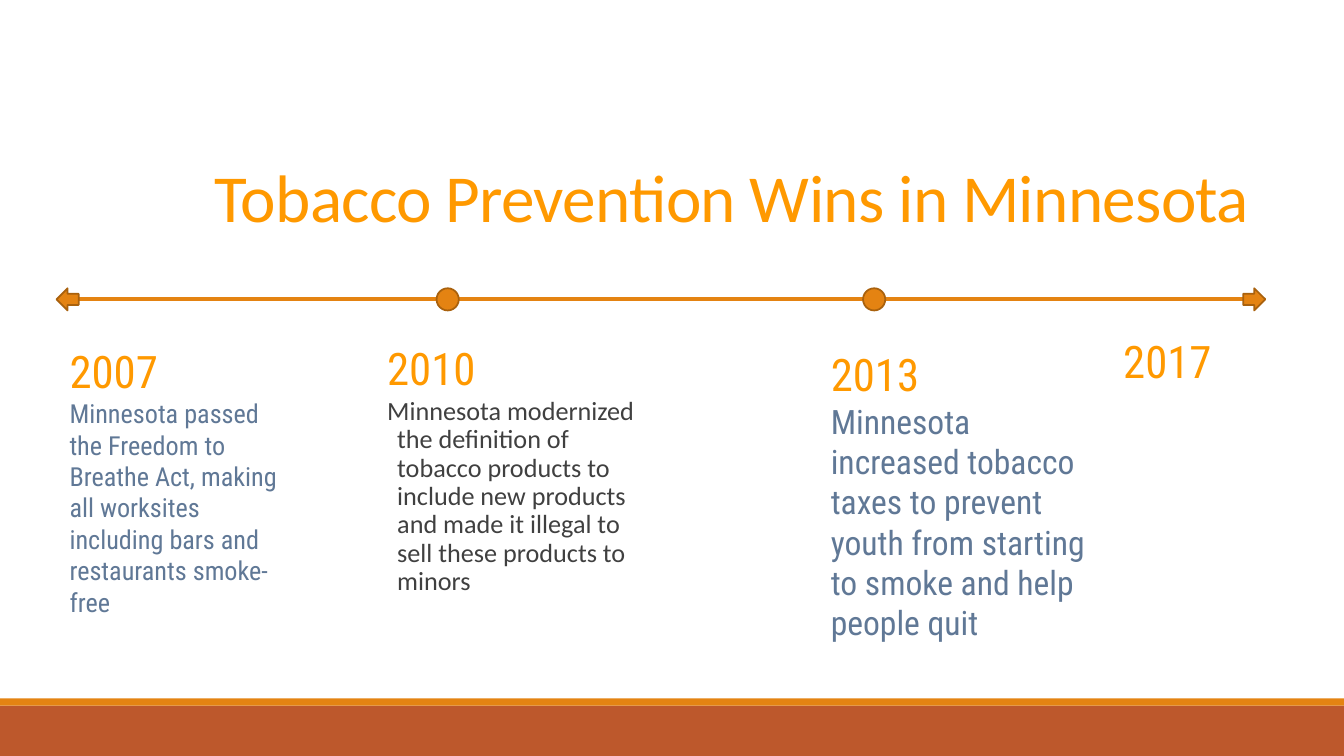
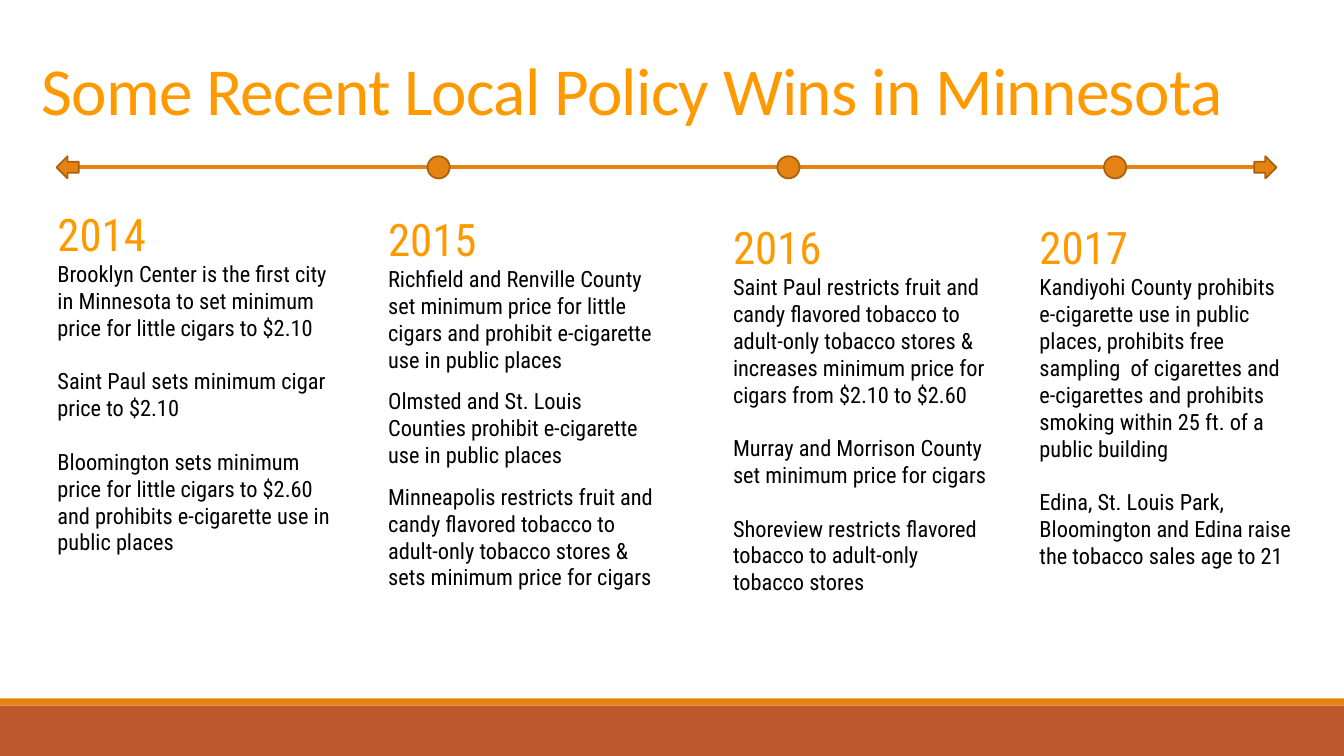
"""Build two timeline slides on tobacco prevention wins in Minnesota."""
from dataclasses import dataclass

from lxml.etree import SubElement
from pptx import Presentation
from pptx.dml.color import RGBColor
from pptx.enum.shapes import MSO_CONNECTOR as Connector, MSO_SHAPE as Shape
from pptx.enum.text import MSO_ANCHOR as Anchor
from pptx.oxml.ns import qn
from pptx.util import Emu, Pt


@dataclass(frozen=True)
class Theme:
    amber: str = "FF9900"
    orange: str = "E48312"
    outline: str = "A9610D"
    rust: str = "BD582C"
    slate: str = "607896"
    gray: str = "404040"
    black: str = "000000"
    sans: str = "Calibri"
    condensed: str = "Roboto Condensed"
    title_size: float = 48
    year_size: float = 32
    large_size: float = 24
    medium_size: float = 18.7
    small_size: float = 16
    axis_width: float = 2.75
    outline_width: float = 1.25


THEME = Theme()
SLIDE_WIDTH, SLIDE_HEIGHT = 1333, 750
AXIS_LEFT, AXIS_RIGHT = 67, 1244
MARKER = 22
INSET = 13


def px(length):
    """Turn a length at 100 px to the inch into EMU."""
    return Emu(length * 9144)


def rgb(color):
    """Turn a hex string into a colour."""
    return RGBColor.from_string(color)


def write(frame, text, *, size, color, font=THEME.condensed, line_spacing=None,
          before=0, after=0, hanging=0, tracking=0):
    """Add one formatted paragraph to a text frame."""
    first = frame.paragraphs[0]
    paragraph = frame.add_paragraph() if first.runs else first
    if hanging:
        properties = paragraph._p.get_or_add_pPr()
        properties.set("marL", str(px(hanging)))
        properties.set("indent", str(-px(hanging)))
    if line_spacing:
        paragraph.line_spacing = line_spacing
    if before:
        paragraph.space_before = Pt(before)
    if after:
        paragraph.space_after = Pt(after)
    run = paragraph.add_run()
    run.text = text
    run.font.name = font
    run.font.size = Pt(size)
    run.font.color.rgb = rgb(color)
    if tracking:
        run.font._element.set("spc", str(round(tracking * 100)))


def add_frame(slide, left, top, width, height, anchor=Anchor.TOP):
    """Add a wrapping text box and return its text frame."""
    frame = slide.shapes.add_textbox(px(left), px(top), px(width), px(height)).text_frame
    frame.word_wrap = True
    frame.vertical_anchor = anchor
    frame.margin_left = frame.margin_right = px(INSET)
    frame.margin_top = frame.margin_bottom = px(INSET)
    return frame


def add_solid(slide, kind, left, top, width, height, fill, outline=None):
    """Add a filled preset shape, outlined if a colour is given."""
    shape = slide.shapes.add_shape(kind, px(left), px(top), px(width), px(height))
    shape.shadow.inherit = False
    shape.fill.solid()
    shape.fill.fore_color.rgb = rgb(fill)
    if outline:
        shape.line.color.rgb = rgb(outline)
        shape.line.width = Pt(THEME.outline_width)
    else:
        shape.line.fill.background()


def add_timeline(slide, axis, dots, right_arrow):
    """Draw the axis with its end arrows and round markers."""
    line = slide.shapes.add_connector(
        Connector.STRAIGHT, px(AXIS_LEFT), px(axis), px(AXIS_RIGHT), px(axis))
    line.line.color.rgb = rgb(THEME.orange)
    line.line.width = Pt(THEME.axis_width)
    SubElement(line._element.spPr, qn("a:effectLst"))
    markers = [(Shape.LEFT_ARROW, AXIS_LEFT - MARKER // 2), (Shape.RIGHT_ARROW, right_arrow)]
    markers += [(Shape.OVAL, dot) for dot in dots]
    for kind, left in markers:
        add_solid(slide, kind, left, axis - MARKER // 2, MARKER, MARKER,
                  THEME.orange, THEME.outline)


def add_milestone(slide, box, year, *wins, gaps=(), size=THEME.small_size,
                  color=THEME.black, font=THEME.condensed, **spacing):
    """Write a year and the wins below it, with the gaps between wins in points."""
    frame = add_frame(slide, *box)
    write(frame, year, size=THEME.year_size, color=THEME.amber, **spacing)
    for win, gap in zip(wins, (0, *gaps)):
        write(frame, win, size=size, color=color, font=font, before=gap, **spacing)


def add_timeline_slide(deck, title, title_box, axis, dots, right_arrow):
    """Add a slide with the shared bands, title and timeline."""
    slide = deck.slides.add_slide(deck.slide_layouts[6])
    add_solid(slide, Shape.RECTANGLE, 0, 700, SLIDE_WIDTH, 50, THEME.rust)
    add_solid(slide, Shape.RECTANGLE, 0, 693, SLIDE_WIDTH, 7, THEME.orange)
    write(add_frame(slide, *title_box, anchor=Anchor.BOTTOM), title,
          size=THEME.title_size, color=THEME.amber, font=THEME.sans,
          line_spacing=0.85, tracking=-0.5)
    add_timeline(slide, axis, dots, right_arrow)
    return slide


def build_state_wins(deck):
    """Build the slide on statewide wins."""
    slide = add_timeline_slide(deck, "Tobacco Prevention Wins in Minnesota",
                               (200, 142, 1133, 105), 297, (433, 856), 1233)
    add_milestone(
        slide, (56, 328, 244, 200), "2007",
        "Minnesota passed the Freedom to Breathe Act, making all worksites "
        "including bars and restaurants smoke-free",
        size=THEME.medium_size, color=THEME.slate)
    add_milestone(
        slide, (371, 331, 289, 200), "2010",
        "Minnesota modernized the definition of tobacco products to include new "
        "products and made it illegal to sell these products to minors",
        size=THEME.medium_size, color=THEME.gray, font=THEME.sans,
        line_spacing=0.9, after=2, hanging=10)
    add_milestone(
        slide, (811, 331, 289, 233), "2013",
        "Minnesota increased tobacco taxes to prevent youth from starting to "
        "smoke and help people quit",
        size=THEME.large_size, color=THEME.slate)
    add_milestone(slide, (1101, 318, 168, 132), "2017")


def build_local_wins(deck):
    """Build the slide on local policy wins."""
    slide = add_timeline_slide(deck, "Some Recent Local Policy Wins in Minnesota",
                               (28, 36, 1300, 105), 166, (424, 771, 1095), 1244)
    add_milestone(
        slide, (44, 192, 311, 344), "2014",
        "Brooklyn Center is the first city in Minnesota to set minimum price for "
        "little cigars to $2.10",
        "Saint Paul sets minimum cigar price to $2.10",
        "Bloomington sets minimum price for little cigars to $2.60 and prohibits "
        "e-cigarette use in public places",
        gaps=(19, 19))
    add_milestone(
        slide, (372, 197, 300, 200), "2015",
        "Richfield and Renville County set minimum price for little cigars and "
        "prohibit e-cigarette use in public places",
        "Olmsted and St. Louis Counties prohibit e-cigarette use in public places",
        "Minneapolis restricts fruit and candy flavored tobacco to adult-only "
        "tobacco stores & sets minimum price for cigars",
        gaps=(10, 11))
    add_milestone(
        slide, (714, 205, 278, 333), "2016",
        "Saint Paul restricts fruit and candy flavored tobacco to adult-only "
        "tobacco stores & increases minimum price for cigars from $2.10 to $2.60",
        "Murray and Morrison County set minimum price for cigars",
        "Shoreview restricts flavored tobacco to adult-only tobacco stores",
        gaps=(19, 19))
    add_milestone(
        slide, (1018, 205, 278, 256), "2017",
        "Kandiyohi County prohibits e-cigarette use in public places, prohibits "
        "free sampling  of cigarettes and e-cigarettes and prohibits smoking "
        "within 25 ft. of a public building",
        "Edina, St. Louis Park, Bloomington and Edina raise the tobacco sales age to 21",
        gaps=(19,))


def main():
    """Build and save the deck."""
    deck = Presentation()
    deck.slide_width, deck.slide_height = px(SLIDE_WIDTH), px(SLIDE_HEIGHT)
    build_state_wins(deck)
    build_local_wins(deck)
    deck.save("out.pptx")


if __name__ == "__main__":
    main()
